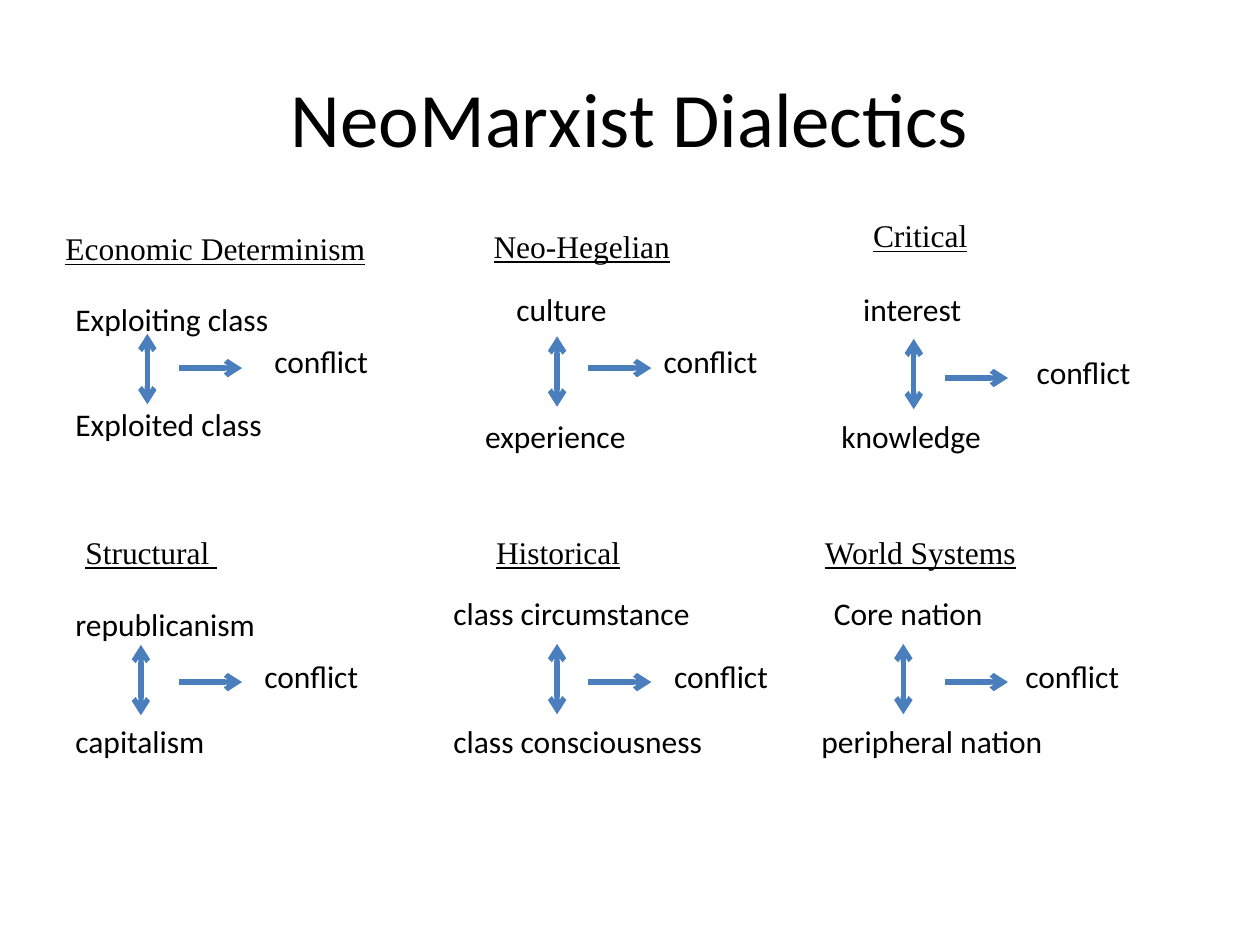
from dataclasses import dataclass

from lxml import etree
from pptx import Presentation
from pptx.dml.color import RGBColor
from pptx.enum import shapes, text
from pptx.oxml import ns
from pptx.util import Cm, Pt


@dataclass(frozen=True)
class Theme:
    ink: RGBColor = RGBColor(0, 0, 0)
    arrow: RGBColor = RGBColor(0x4B, 0x7E, 0xBC)
    body_font: str = "Calibri"
    heading_font: str = "Times New Roman"
    title_size: int = 44
    body_size: int = 18
    arrow_width: int = 3


@dataclass(frozen=True)
class Dialectic:
    heading: tuple
    thesis: tuple
    antithesis: tuple
    conflict: tuple
    opposition: tuple
    outcome: tuple


THEME = Theme()
LABEL_HEIGHT = 1.03
CONFLICT_WIDTH = 2.44
OPPOSITION_LENGTH = 1.42
OUTCOME_LENGTH = 1.27

DIALECTICS = [
    Dialectic(("Economic Determinism", 1.07, 4.5, 6.63),
              ("Exploiting class", 1.27, 5.92, 4.45),
              ("Exploited class", 1.27, 8.05, 4.32),
              (5.28, 6.78), (2.97, 6.73), (3.61, 7.42)),
    Dialectic(("Neo-Hegelian", 9.7, 4.45, 4.11),
              ("culture", 10.16, 5.72, 2.36),
              ("experience", 9.53, 8.28, 3.38),
              (13.13, 6.78), (11.23, 6.78), (11.86, 7.42)),
    Dialectic(("Critical", 17.35, 4.24, 2.44),
              ("interest", 17.15, 5.72, 2.51),
              ("knowledge", 16.71, 8.28, 3.35),
              (20.65, 6.99), (18.42, 6.83), (19.05, 7.62)),
    Dialectic(("Structural ", 1.47, 10.62, 3.23),
              ("republicanism", 1.27, 12.07, 4.17),
              ("capitalism", 1.27, 14.43, 3.15),
              (5.08, 13.13), (2.84, 13), (3.61, 13.75)),
    Dialectic(("Historical", 9.75, 10.62, 3.05),
              ("class circumstance", 8.89, 11.86, 5.33),
              ("class consciousness", 8.89, 14.43, 5.59),
              (13.34, 13.13), (11.23, 12.98), (11.86, 13.75)),
    Dialectic(("World Systems", 16.38, 10.62, 4.39),
              ("Core nation", 16.56, 11.86, 3.56),
              ("peripheral nation", 16.31, 14.43, 5.03),
              (20.42, 13.13), (18.21, 12.98), (19.05, 13.75)),
]


def add_text(slide, content, left, top, width, height=LABEL_HEIGHT, *,
             font=THEME.body_font, size=THEME.body_size, underline=False,
             align=text.PP_ALIGN.LEFT, anchor=text.MSO_ANCHOR.TOP, wrap=False):
    box = slide.shapes.add_textbox(Cm(left), Cm(top), Cm(width), Cm(height))
    frame = box.text_frame
    frame.word_wrap = wrap
    frame.vertical_anchor = anchor
    paragraph = frame.paragraphs[0]
    paragraph.alignment = align
    run = paragraph.add_run()
    run.text = content
    run.font.name = font
    run.font.size = Pt(size)
    run.font.underline = underline
    run.font.color.rgb = THEME.ink


def add_arrow(slide, left, top, across=0, down=0, both_ends=False):
    connector = slide.shapes.add_connector(
        shapes.MSO_CONNECTOR.STRAIGHT,
        Cm(left), Cm(top), Cm(left + across), Cm(top + down))
    connector.line.color.rgb = THEME.arrow
    connector.line.width = Pt(THEME.arrow_width)
    line = connector.line._get_or_add_ln()
    for end in ("a:headEnd", "a:tailEnd") if both_ends else ("a:tailEnd",):
        etree.SubElement(line, ns.qn(end), type="arrow")
    etree.SubElement(connector._element.spPr, ns.qn("a:effectLst"))


def add_dialectic(slide, dialectic):
    add_text(slide, *dialectic.heading, font=THEME.heading_font, underline=True)
    add_text(slide, *dialectic.thesis)
    add_text(slide, *dialectic.antithesis)
    add_text(slide, "conflict", *dialectic.conflict, CONFLICT_WIDTH)
    add_arrow(slide, *dialectic.opposition, down=OPPOSITION_LENGTH, both_ends=True)
    add_arrow(slide, *dialectic.outcome, across=OUTCOME_LENGTH)


def main():
    presentation = Presentation()
    presentation.slide_width = Cm(25.4)
    presentation.slide_height = Cm(19.05)
    slide = presentation.slides.add_slide(presentation.slide_layouts[6])
    add_text(slide, "NeoMarxist Dialectics", 1.27, 0.76, 22.86, 3.18,
             size=THEME.title_size, align=text.PP_ALIGN.CENTER,
             anchor=text.MSO_ANCHOR.MIDDLE, wrap=True)
    for dialectic in DIALECTICS:
        add_dialectic(slide, dialectic)
    presentation.save("out.pptx")


if __name__ == "__main__":
    main()
